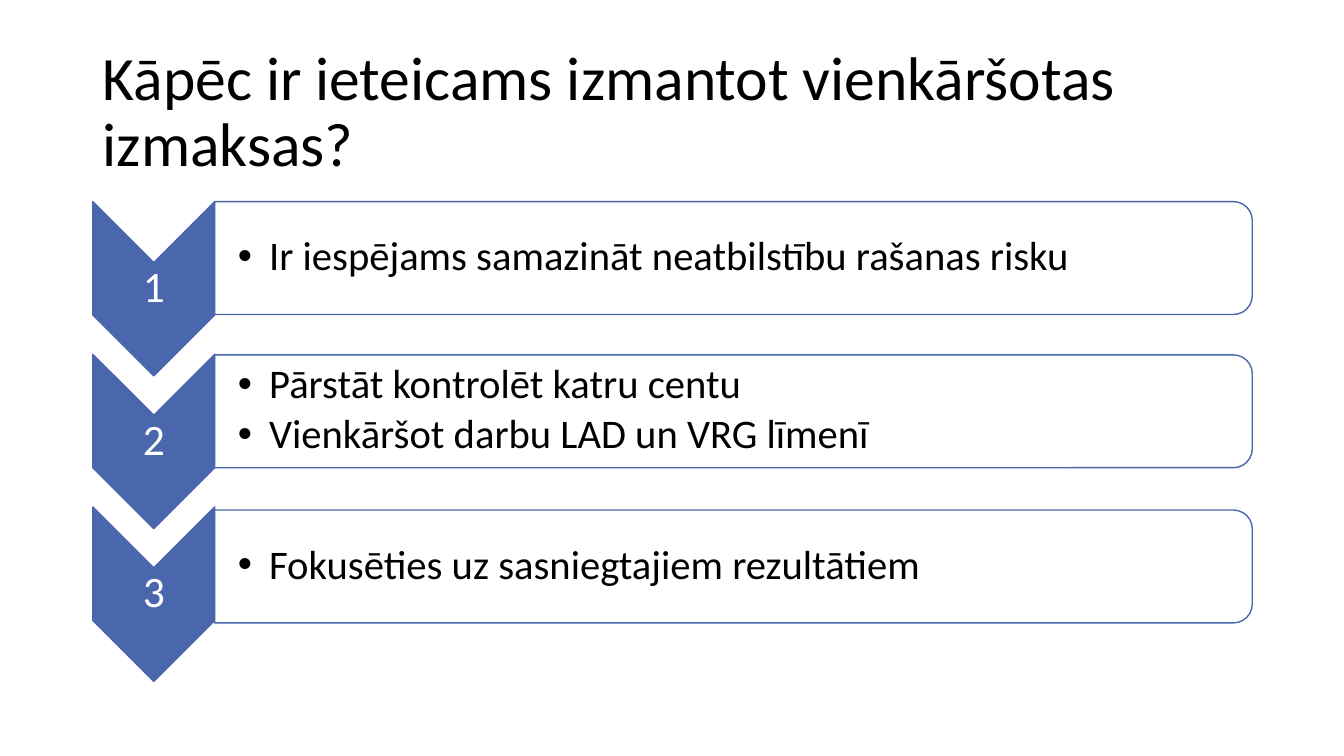
from lxml.etree import SubElement
from pptx import Presentation
from pptx.dml.color import RGBColor
from pptx.enum.shapes import MSO_SHAPE as Shape
from pptx.enum.text import MSO_ANCHOR as Anchor, PP_ALIGN as Align
from pptx.oxml.ns import qn
from pptx.util import Inches, Pt

BLUE, WHITE, BLACK = "4A66AC", "FFFFFF", "000000"
STEP = 1.515
ROWS = [
    (2.0, ["Ir iespējams samazināt neatbilstību rašanas risku"]),
    (3.52, ["Pārstāt kontrolēt katru centu", "Vienkāršot darbu LAD un VRG līmenī"]),
    (5.06, ["Fokusēties uz sasniegtajiem rezultātiem"]),
]


def color(code):
    return RGBColor.from_string(code)


def add_shape(slide, kind, left, top, wide, high, fill, alpha=100):
    x = left + (wide - high) / 2
    y = top + (high - wide) / 2
    shape = slide.shapes.add_shape(kind, Inches(x), Inches(y), Inches(high), Inches(wide))
    shape.rotation = 90
    shape.shadow.inherit = False
    shape.fill.solid()
    shape.fill.fore_color.rgb = color(fill)
    if alpha < 100:
        tone = shape.fill._xPr.find(qn("a:solidFill"))[0]
        SubElement(tone, qn("a:alpha"), val=str(alpha * 1000))
    shape.line.color.rgb = color(BLUE)
    shape.line.width = Pt(1)


def add_bullet(para):
    props = para._p.get_or_add_pPr()
    props.set("marL", str(Inches(0.31)))
    props.set("indent", str(Inches(-0.31)))
    SubElement(props, qn("a:buFont"), typeface="Arial")
    SubElement(props, qn("a:buChar"), char="•")


def add_text(slide, box, lines, size, ink, pad=(0.02, 0.02), align=Align.LEFT,
             after=0, bullet=False):
    frame = slide.shapes.add_textbox(*map(Inches, box)).text_frame
    frame.word_wrap = True
    frame.vertical_anchor = Anchor.MIDDLE
    frame.margin_left, frame.margin_right = map(Inches, pad)
    frame.margin_top = frame.margin_bottom = Inches(0.02)
    for num, line in enumerate(lines):
        para = frame.add_paragraph() if num else frame.paragraphs[0]
        para.alignment = align
        para.line_spacing = 0.9
        para.space_after = Pt(after)
        if bullet:
            add_bullet(para)
        run = para.add_run()
        run.text = line
        run.font.name = "Calibri"
        run.font.size = Pt(size)
        run.font.color.rgb = color(ink)


def add_row(slide, num, top, lines):
    tip = 2 + num * STEP
    add_shape(slide, Shape.CHEVRON, 0.92, tip, 1.21, 1.73, BLUE)
    add_text(slide, (0.92, tip + 0.6, 1.21, 0.52), [str(num + 1)], 31, WHITE,
             align=Align.CENTER)
    add_shape(slide, Shape.ROUND_2_SAME_RECTANGLE, 2.13, top, 10.29, 1.12, WHITE, 90)
    add_text(slide, (2.13, top + 0.05, 10.24, 1.01), lines, 29, BLACK,
             pad=(0.23, 0.02), after=4.35, bullet=True)


def main():
    deck = Presentation()
    deck.slide_width, deck.slide_height = Inches(13.33), Inches(7.5)
    slide = deck.slides.add_slide(deck.slide_layouts[6])
    add_text(slide, (0.92, 0.4, 11.5, 1.45),
             ["Kāpēc ir ieteicams izmantot vienkāršotas izmaksas?"], 44, BLACK,
             pad=(0.1, 0.1))
    for num, (top, lines) in enumerate(ROWS):
        add_row(slide, num, top, lines)
    deck.save("out.pptx")


if __name__ == "__main__":
    main()
